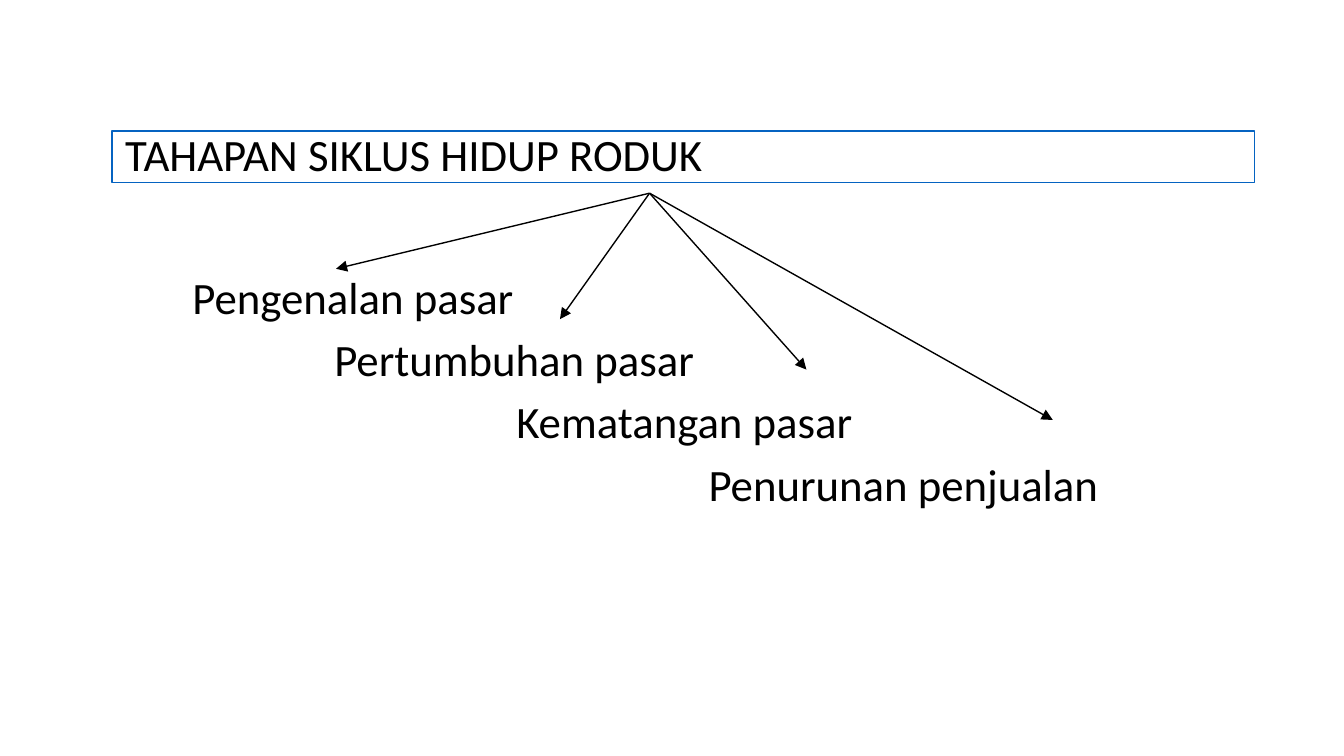
"""Build a slide showing the stages of the product life cycle."""
from lxml.etree import SubElement
from pptx import Presentation
from pptx.dml.color import RGBColor
from pptx.enum.shapes import MSO_CONNECTOR, MSO_SHAPE
from pptx.enum.text import MSO_ANCHOR, PP_ALIGN
from pptx.oxml.ns import qn
from pptx.util import Pt

BLACK = RGBColor(0x00, 0x00, 0x00)
BLUE = RGBColor(0x05, 0x63, 0xC1)
STAGES = [
    ("Pengenalan pasar", 0, (180, 144)),
    ("Pertumbuhan pasar", 76, (300, 171)),
    ("Kematangan pasar", 173.5, (432, 198)),
    ("Penurunan penjualan", 276.5, (564, 225)),
]
ARROW_START = (348, 103.5)


def style_paragraph(para):
    para.alignment = PP_ALIGN.LEFT
    para.line_spacing = 0.9
    for span in para.runs:
        span.font.name = "Calibri"
        span.font.size = Pt(24)
        span.font.color.rgb = BLACK


deck = Presentation()
deck.slide_width = Pt(720)
deck.slide_height = Pt(405)
page = deck.slides.add_slide(deck.slide_layouts[6])

title = page.shapes.add_shape(MSO_SHAPE.RECTANGLE, Pt(60), Pt(70.3), Pt(612), Pt(27.5))
title.shadow.inherit = False
title.fill.background()
title.line.color.rgb = BLUE
title.line.width = Pt(0.75)
title.text_frame.word_wrap = True
title.text_frame.vertical_anchor = MSO_ANCHOR.MIDDLE
title.text_frame.text = "TAHAPAN SIKLUS HIDUP RODUK"
style_paragraph(title.text_frame.paragraphs[0])

stage_box = page.shapes.add_textbox(Pt(96), Pt(144), Pt(612), Pt(216))
stage_box.text_frame.word_wrap = True
stage_box.text_frame.text = "\n".join(name for name, indent, tip in STAGES)

for para, (name, indent, tip) in zip(stage_box.text_frame.paragraphs, STAGES):
    style_paragraph(para)
    if indent:
        para.space_before = Pt(7.5)
        para._p.get_or_add_pPr().set("marL", str(Pt(indent)))

    start_x, start_y = ARROW_START
    tip_x, tip_y = tip
    arrow = page.shapes.add_connector(
        MSO_CONNECTOR.STRAIGHT, Pt(start_x), Pt(start_y), Pt(tip_x), Pt(tip_y)
    )
    arrow.line.color.rgb = BLACK
    arrow.line.width = Pt(0.75)
    SubElement(arrow.line._get_or_add_ln(), qn("a:tailEnd"), type="triangle")
    SubElement(arrow._element.spPr, qn("a:effectLst"))

deck.save("out.pptx")
